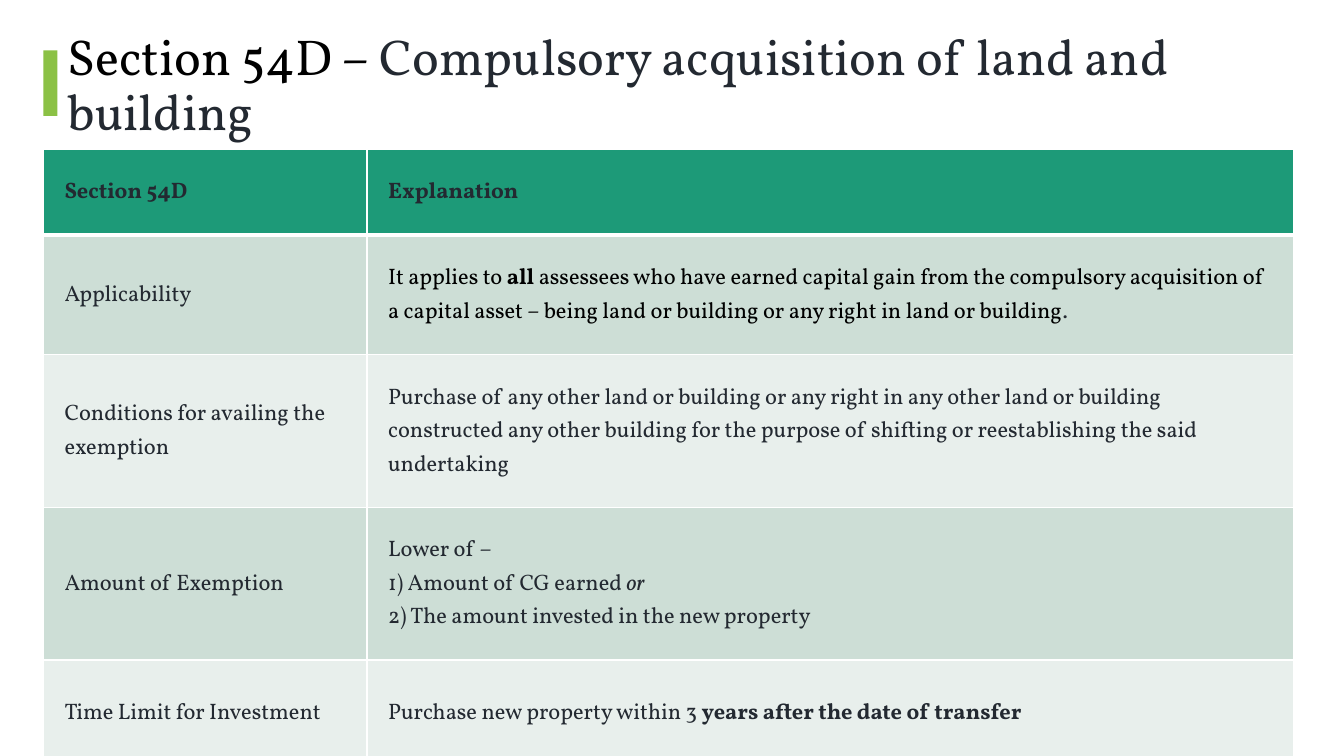
from dataclasses import dataclass

from lxml import etree
from pptx import Presentation
from pptx.dml.color import RGBColor
from pptx.enum.shapes import MSO_SHAPE
from pptx.enum.text import MSO_ANCHOR, MSO_AUTO_SIZE, PP_ALIGN
from pptx.oxml.ns import qn
from pptx.util import Emu, Pt

RECT = MSO_SHAPE.RECTANGLE
MIDDLE = MSO_ANCHOR.MIDDLE
NO_FIT = MSO_AUTO_SIZE.NONE
LEFT = PP_ALIGN.LEFT

PX = 9144
FONT = "Vollkorn"
COLORS = {
    "black": "000000",
    "ink": "232931",
    "accent": "8BC145",
    "header": "1D9A78",
    "band": "CDDED6",
    "light": "E8EFEC",
    "border": "FFFFFF",
}
TITLE_FRAME = {
    "word_wrap": True,
    "auto_size": NO_FIT,
    "vertical_anchor": MIDDLE,
}
TITLE_PARAGRAPH = {"line_spacing": 0.9, "alignment": LEFT}
CELL_FORMAT = {
    "vertical_anchor": MIDDLE,
    "margin_left": Emu(21 * PX),
    "margin_right": Emu(21 * PX),
    "margin_top": Emu(26 * PX),
    "margin_bottom": Emu(26 * PX),
}
CELL_PARAGRAPH = {
    "line_spacing": 1.07,
    "space_after": Pt(8),
    "alignment": LEFT,
}
COLUMN_WIDTHS = (321, 919)


@dataclass(frozen=True)
class Span:
    text: str
    color: str = "ink"
    bold: bool = False
    italic: bool = False


@dataclass(frozen=True)
class Row:
    height: int
    label: str
    spans: tuple[Span, ...]


TITLE = (
    Span("Section 54D – ", "black"),
    Span("Compulsory acquisition of land and building"),
)
ROWS = (
    Row(78, "Section 54D", (Span("Explanation", bold=True),)),
    Row(105, "Applicability", (
        Span("It applies to ", "black"),
        Span("all ", "black", bold=True),
        Span("assessees who have earned capital gain from the compulsory "
             "acquisition of a capital asset – being land or building or any "
             "right in land or building", "black"),
        Span("."),
    )),
    Row(105, "Conditions for availing the exemption", (
        Span("Purchase of any other land or building or any right in any "
             "other land or building constructed any other building for the "
             "purpose of shifting or reestablishing the said undertaking"),
    )),
    Row(133, "Amount of Exemption", (
        Span("Lower of –\n1) Amount of CG earned"),
        Span(" or\n", italic=True),
        Span("2) The amount invested in the new property"),
    )),
    Row(105, "Time Limit for Investment", (
        Span("Purchase new property within 3"),
        Span(" years after the date of transfer", bold=True),
    )),
)


def rgb(name: str) -> RGBColor:
    return RGBColor.from_string(COLORS[name])


def apply(target, values: dict) -> None:
    for name, value in values.items():
        setattr(target, name, value)


def box(left: int, top: int, width: int, height: int) -> tuple[Emu, ...]:
    return tuple(Emu(v * PX) for v in (left, top, width, height))


def write(p, spans: tuple[Span, ...], size: int) -> None:
    for span in spans:
        for i, line in enumerate(span.text.split("\n")):
            if i:
                p.add_line_break()
            if line:
                r = p.add_run()
                r.text = line
                apply(r.font, {
                    "name": FONT,
                    "size": Pt(size),
                    "bold": span.bold,
                    "italic": span.italic,
                })
                r.font.color.rgb = rgb(span.color)


def add_borders(cell, bottom: int) -> None:
    tc_pr = cell._tc.get_or_add_tcPr()
    sides = (("lnL", 1), ("lnR", 1), ("lnT", 1), ("lnB", bottom))
    for i, (tag, width) in enumerate(sides):
        ln = etree.Element(qn(f"a:{tag}"), w=str(Pt(width)))
        fill = etree.SubElement(ln, qn("a:solidFill"))
        etree.SubElement(fill, qn("a:srgbClr"), val=COLORS["border"])
        tc_pr.insert(i, ln)


def format_cell(cell, spans: tuple[Span, ...], fill: str, bottom: int) -> None:
    apply(cell, CELL_FORMAT)
    cell.fill.solid()
    cell.fill.fore_color.rgb = rgb(fill)
    add_borders(cell, bottom)
    p = cell.text_frame.paragraphs[0]
    apply(p, CELL_PARAGRAPH)
    write(p, spans, 16)


def add_title(s) -> None:
    sp = s.shapes.title
    sp.left, sp.top, sp.width, sp.height = box(57, 24, 1193, 124)
    tf = sp.text_frame
    apply(tf, TITLE_FRAME)
    p = tf.paragraphs[0]
    apply(p, TITLE_PARAGRAPH)
    write(p, TITLE, 36)


def add_accent(s) -> None:
    sp = s.shapes.add_shape(RECT, *box(43, 50, 14, 65))
    sp.shadow.inherit = False
    sp.fill.solid()
    sp.fill.fore_color.rgb = rgb("accent")
    sp.line.fill.background()


def add_section_table(s) -> None:
    height = sum(row.height for row in ROWS)
    frame = s.shapes.add_table(
        len(ROWS), len(COLUMN_WIDTHS), *box(43, 148, sum(COLUMN_WIDTHS), height)
    )
    table = frame.table
    table.horz_banding = False
    for column, width in zip(table.columns, COLUMN_WIDTHS):
        column.width = Emu(width * PX)
    for i, row in enumerate(ROWS):
        is_header = i == 0
        table.rows[i].height = Emu(row.height * PX)
        fill = "header" if is_header else ("light", "band")[i % 2]
        label = (Span(row.label, bold=is_header),)
        for j, spans in enumerate((label, row.spans)):
            format_cell(table.cell(i, j), spans, fill, 3 if is_header else 1)


def main() -> None:
    prs = Presentation()
    prs.slide_width, prs.slide_height = Emu(1333 * PX), Emu(750 * PX)
    s = prs.slides.add_slide(prs.slide_layouts[5])
    add_title(s)
    add_accent(s)
    add_section_table(s)
    prs.save("out.pptx")


if __name__ == "__main__":
    main()
